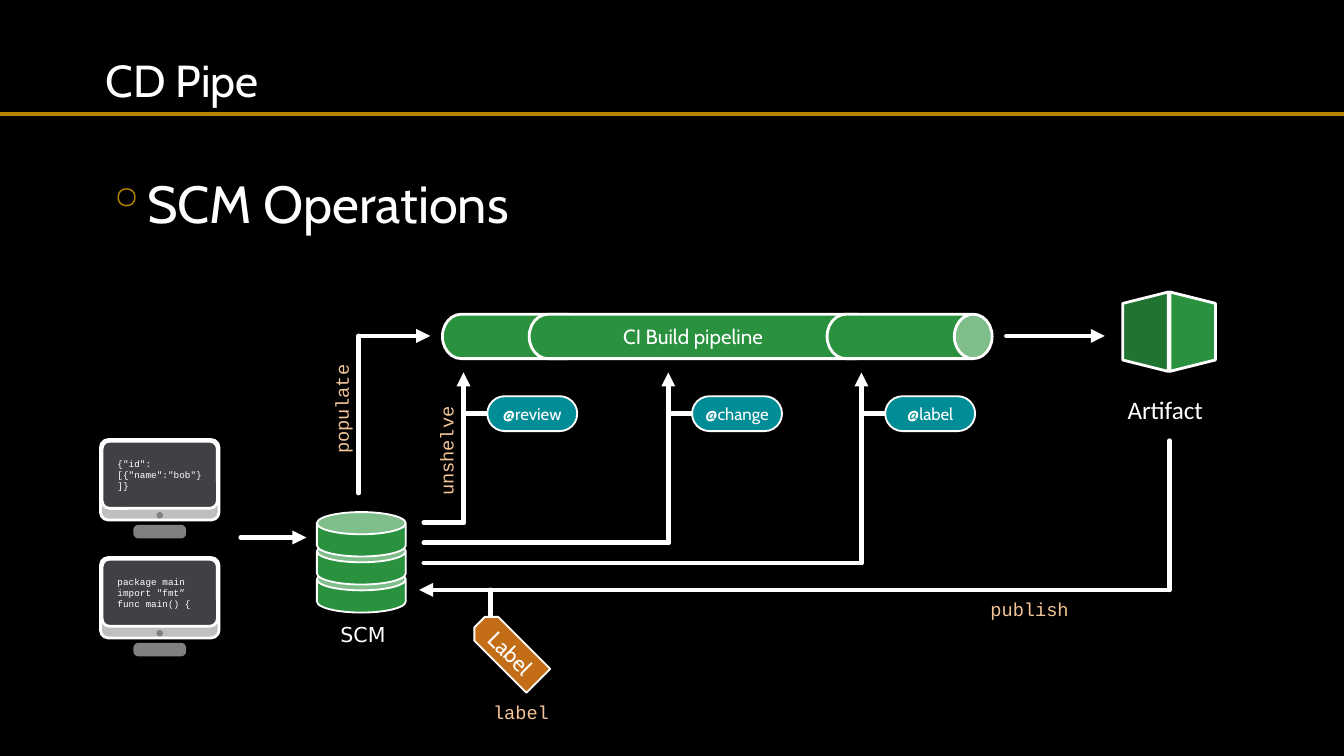
from lxml import etree
from pptx import Presentation
from pptx.dml.color import RGBColor
from pptx.enum.shapes import MSO_CONNECTOR, MSO_SHAPE as Geo
from pptx.enum.text import MSO_ANCHOR as Anchor, PP_ALIGN as Align
from pptx.oxml.ns import qn
from pptx.util import Cm, Pt

COLORS = {
    "black": "000000", "white": "FFFFFF", "gold": "B88400", "green": "2A923F",
    "dark_green": "217332", "teal": "008D96", "orange": "C36D16",
    "peach": "F3C596", "silver": "BFBFBF", "grey": "808080", "screen": "3F4144",
}


def rgb(name):
    return RGBColor.from_string(COLORS[name])


def write(shape, text, size, font="Cabin", color="white", align=Align.LEFT,
          anchor=Anchor.TOP, insets=(0.25, 0.13, 0.25, 0.13), wrap=True,
          spacing=None, vert=None):
    frame = shape.text_frame
    frame.text = text
    frame.word_wrap = wrap
    frame.vertical_anchor = anchor
    (frame.margin_left, frame.margin_top,
     frame.margin_right, frame.margin_bottom) = map(Cm, insets)
    if vert:
        frame._txBody.bodyPr.set("vert", vert)
    for paragraph in frame.paragraphs:
        paragraph.alignment = align
        paragraph.line_spacing = spacing
        for run in paragraph.runs:
            run.font.size = Pt(size)
            run.font.name = font
            run.font.color.rgb = rgb(color)


def add_text(slide, box, text, size, rotation=0, **style):
    label = slide.shapes.add_textbox(*map(Cm, box))
    label.rotation = rotation
    write(label, text, size, **style)
    return label


def add_part(slide, geometry, box, fill, line="white", width=1.0, adjust=(), rotation=0):
    part = slide.shapes.add_shape(geometry, *map(Cm, box))
    part.shadow.inherit = False
    part.rotation = rotation
    part.fill.solid()
    part.fill.fore_color.rgb = rgb(fill)
    part.line.color.rgb = rgb(line)
    part.line.width = Pt(width)
    for i, value in enumerate(adjust):
        part.adjustments[i] = value
    return part


def add_turned(slide, geometry, box, fill, rotation, **style):
    """Add a quarter-turned part that covers the given box once turned."""
    x, y, w, h = box
    upright = (x + (w - h) / 2, y + (h - w) / 2, h, w)
    return add_part(slide, geometry, upright, fill, rotation=rotation, **style)


def add_route(slide, points, arrow=True, color="white", width=2.5):
    """Join the points with straight lines, with an arrowhead at the end."""
    for start, end in zip(points, points[1:]):
        line = slide.shapes.add_connector(
            MSO_CONNECTOR.STRAIGHT, *map(Cm, (*start, *end)))
        line.line.color.rgb = rgb(color)
        line.line.width = Pt(width)
        properties = line._element.spPr
        etree.SubElement(properties, qn("a:effectLst"))
        stroke = properties.find(qn("a:ln"))
        stroke.set("cap", "rnd")
        if arrow and end == points[-1]:
            etree.SubElement(stroke, qn("a:tailEnd"), type="triangle")


def add_caption(slide, x, y, text, rotation=0):
    add_text(slide, (x, y, 2.29, 0.69), text, 10, rotation,
             font="Courier New", color="peach")


def add_heading(slide, x, y, w, h):
    add_route(slide, [(0, y + h), (25.4, y + h)], arrow=False, color="gold", width=2)
    add_text(slide, (x, y, w, h), "CD Pipe", 24, anchor=Anchor.BOTTOM, spacing=0.9)


def add_topic(slide, x, y, w, h):
    topic = add_text(slide, (x, y, w, h), "SCM Operations", 28, spacing=0.9)
    properties = topic.text_frame.paragraphs[0]._p.get_or_add_pPr()
    properties.set("marL", str(Cm(0.67)))
    properties.set("indent", str(-Cm(0.67)))
    bullet_color = etree.SubElement(properties, qn("a:buClr"))
    etree.SubElement(bullet_color, qn("a:srgbClr"), val=COLORS["gold"])
    etree.SubElement(properties, qn("a:buChar"), char="◦")


def add_monitor(slide, x, y, w, h, code):
    middle = x + w / 2
    add_part(slide, Geo.ROUNDED_RECTANGLE, (x, y, w, h), "silver", width=1.5, adjust=[0.097])
    screen = add_part(slide, Geo.ROUNDED_RECTANGLE, (x + 0.03, y + 0.03, w - 0.06, h - 0.25),
                      "screen", width=1.5, adjust=[0.112])
    write(screen, code, 5, font="Courier New", anchor=Anchor.MIDDLE,
          insets=(0.25, 0.13, 0.2, 0.13))
    button = add_part(slide, Geo.OVAL, (middle - 0.06, y + 1.37, 0.12, 0.12), "grey")
    button.line.fill.background()
    add_part(slide, Geo.ROUNDED_RECTANGLE, (middle - 0.46, y + h + 0.13, 0.92, 0.18),
             "grey", line="grey", width=2.25, adjust=[0.34])


def add_scm(slide, x, y, w, h):
    for i in (2, 1, 0):
        add_part(slide, Geo.CAN, (x, y + 0.53 * i, w, h), "green", adjust=[0.5])
    add_text(slide, (x + 0.17, y + 1.95, 1.4, 0.74), "SCM", 11, font="DejaVu Sans",
             align=Align.CENTER, wrap=False)


def add_pipeline(slide, x, y, h):
    for offset, length, text in ((0, 2.72, ""), (1.64, 6.55, "CI Build pipeline"), (7.27, 3.12, "")):
        section = add_turned(slide, Geo.CAN, (x + offset, y, length, h), "green", 90,
                             width=1.5, adjust=[0.851])
        if text:
            write(section, text, 11, align=Align.CENTER, anchor=Anchor.MIDDLE, vert="vert270")


def add_artifact(slide, x, y, w, h):
    for i, (fill, rotation) in enumerate((("dark_green", 270), ("green", 90))):
        add_turned(slide, Geo.TRAPEZOID, (x + 0.89 * i, y, w, h), fill, rotation, width=1.5)
    add_text(slide, (x - 0.16, y + 1.8, 2.11, 0.84), "Artifact", 13.5, font="Calibri")


def add_trigger(slide, left, bottom, x, top, text):
    """Route a source row up into the pipeline, with a pill at its side."""
    add_route(slide, [(left, bottom), (x, bottom), (x, top)])
    add_route(slide, [(x, top + 0.78), (x + 0.46, top + 0.78)], arrow=False)
    pill = add_part(slide, Geo.ROUNDED_RECTANGLE, (x + 0.45, top + 0.45, 1.7, 0.66),
                    "teal", adjust=[0.5])
    write(pill, text, 9, align=Align.CENTER, anchor=Anchor.MIDDLE, insets=(0.1, 0, 0.1, 0))


def add_tag(slide, x, y, w, h):
    add_route(slide, [(x - 0.03, y + 0.18), (x - 0.03, y - 0.38)], arrow=False)
    tag = add_part(slide, Geo.SNIP_2_SAME_RECTANGLE, (x, y, w, h), "orange",
                   adjust=[0.284, 0], rotation=315)
    write(tag, "Label", 12, align=Align.CENTER, anchor=Anchor.MIDDLE,
          insets=(0, 0, 0, 0), wrap=False, vert="vert")
    add_caption(slide, x - 0.23, y + 1.58, "label")


def main():
    deck = Presentation()
    deck.slide_width, deck.slide_height = Cm(25.4), Cm(14.29)
    slide = deck.slides.add_slide(deck.slide_layouts[6])
    slide.background.fill.solid()
    slide.background.fill.fore_color.rgb = rgb("black")

    add_heading(slide, 1.75, 0, 21.89, 2.16)
    add_topic(slide, 1.75, 3.25, 21.89, 1.98)

    # Stations of the pipe
    programs = ('{"id":[{"name":"bob"}]}', 'package main\nimport "fmt”\nfunc main() {')
    for i, code in enumerate(programs):
        add_monitor(slide, 1.9, 8.31 + 2.23 * i, 2.24, 1.52, code)
    add_scm(slide, 5.99, 9.68, 1.68, 0.84)
    add_pipeline(slide, 8.36, 5.94, 0.84)
    add_artifact(slide, 21.22, 5.52, 0.86, 1.5)

    # Flow between the stations
    add_route(slide, [(4.55, 10.16), (5.79, 10.16)])
    add_route(slide, [(19.02, 6.35), (20.88, 6.35)])
    add_route(slide, [(22.1, 8.33), (22.1, 11.15), (7.92, 11.15)])
    add_route(slide, [(6.78, 9.32), (6.78, 6.35), (8.13, 6.35)])
    for i, (x, text) in enumerate(((8.76, "@review"), (12.63, "@change"), (16.28, "@label"))):
        add_trigger(slide, 8.01, 9.88 + 0.38 * i, x, 7.04, text)
    add_tag(slide, 9.3, 11.53, 0.64, 1.57)

    # Operation names
    add_caption(slide, 5.31, 7.34, "populate", 270)
    add_caption(slide, 7.29, 8.13, "unshelve", 270)
    add_caption(slide, 18.47, 11.18, "publish")

    deck.save("out.pptx")


if __name__ == "__main__":
    main()
